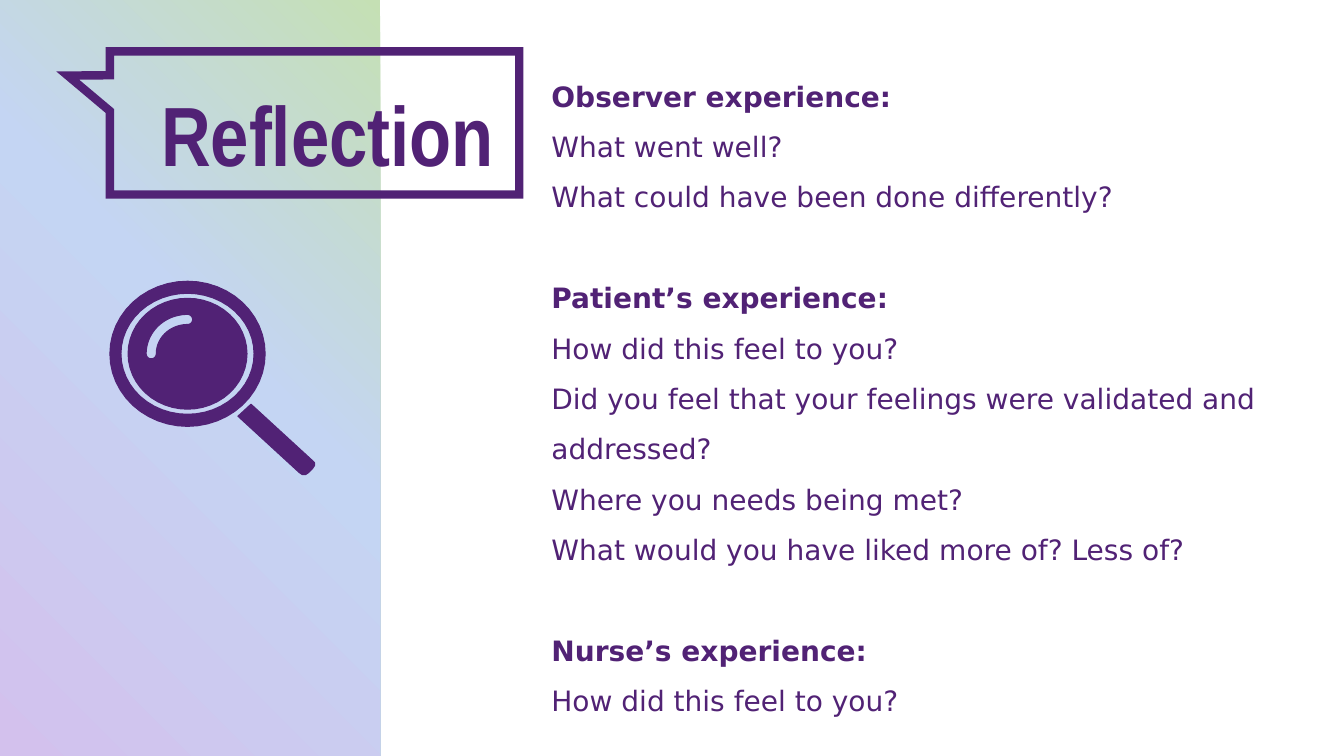
from math import cos, radians, sin

from lxml import etree
from pptx import Presentation
from pptx.dml.color import RGBColor
from pptx.enum.shapes import MSO_SHAPE
from pptx.oxml import parse_xml
from pptx.oxml.ns import nsdecls, qn
from pptx.util import Inches, Pt

RECTANGLE = MSO_SHAPE.RECTANGLE
CALLOUT = MSO_SHAPE.RECTANGULAR_CALLOUT
COLORS = {"purple": "512275", "lilac": "D3C1ED", "sky": "C4D5F3", "leaf": "C5E0B4"}
PURPLE = RGBColor.from_string(COLORS["purple"])


def write_text(frame, text, size, font, bold=False, spacing=1.0, before=0, indent=0):
    paragraph = frame.paragraphs[0]
    if paragraph.runs:
        paragraph = frame.add_paragraph()
    paragraph.line_spacing = spacing
    paragraph.space_before = Pt(before)
    if indent:
        paragraph.level = 2
        properties = paragraph._p.get_or_add_pPr()
        properties.set("marL", str(Inches(indent)))
        properties.set("indent", "0")
    run = paragraph.add_run()
    run.text = text
    run.font.size = Pt(size)
    run.font.name = font
    run.font.bold = bold
    run.font.color.rgb = PURPLE


def arc(x, y, rx, ry, start=0, stop=360):
    steps = 48
    angles = [radians(start + (stop - start) * i / steps) for i in range(steps + 1)]
    return [(x + rx * cos(a), y + ry * sin(a)) for a in angles]


deck = Presentation()
deck.slide_width = Inches(13.33)
deck.slide_height = Inches(7.5)
slide = deck.slides.add_slide(deck.slide_layouts[6])
shapes = slide.shapes

side_panel = shapes.add_shape(RECTANGLE, 0, 0, Inches(3.77), Inches(7.5))
side_panel.shadow.inherit = False
side_panel.line.fill.background()
stops = "".join(
    f'<a:gs pos="{percent * 1000}"><a:srgbClr val="{COLORS[name]}"/></a:gs>'
    for percent, name in [(0, "lilac"), (56, "sky"), (100, "leaf")]
)
gradient = parse_xml(
    f'<a:gradFill {nsdecls("a")} rotWithShape="1"><a:gsLst>{stops}</a:gsLst>'
    '<a:path path="circle"><a:fillToRect t="100000" r="100000"/></a:path></a:gradFill>'
)
side_panel._element.spPr.find(qn("a:prstGeom")).addnext(gradient)

speech_bubble = shapes.add_shape(CALLOUT, Inches(1.09), Inches(0.51), Inches(4.06), Inches(1.42))
speech_bubble.shadow.inherit = False
speech_bubble.adjustments[0] = -0.603
speech_bubble.adjustments[1] = -0.331
speech_bubble.fill.background()
speech_bubble.line.color.rgb = PURPLE
speech_bubble.line.width = Pt(6)
etree.SubElement(speech_bubble.line._ln, qn("a:miter")).set("lim", "800000")

title = shapes.add_textbox(Inches(1.31), Inches(0.57), Inches(3.84), Inches(1.31)).text_frame
title.word_wrap = True
write_text(title, "Reflection", 60, "Arial Narrow", bold=True, spacing=1.2, indent=0.19)

rim = [arc(1.86, 3.51, 0.77, 0.72), arc(1.86, 3.51, 0.66, 0.6)]
glint = (
    arc(1.86, 3.51, 0.41, 0.39, 180, 270)
    + arc(1.86, 3.17, 0.05, 0.05, 270, 450)
    + arc(1.86, 3.51, 0.31, 0.29, 270, 180)
    + arc(1.5, 3.51, 0.05, 0.05, 0, 180)
)
lens = [arc(1.86, 3.51, 0.59, 0.55), glint]
handle = [[
    (2.49, 4.01), (2.36, 4.13), (2.97, 4.69), (3, 4.71), (3.03, 4.71),
    (3.06, 4.69), (3.1, 4.65), (3.12, 4.62), (3.12, 4.59), (3.1, 4.57),
]]
magnifier = shapes.add_group_shape()
for outlines in (rim, lens, handle):
    contours = [[(Inches(x), Inches(y)) for x, y in outline] for outline in outlines]
    builder = magnifier.shapes.build_freeform(*contours[0][0])
    builder.add_line_segments(contours[0][1:])
    for contour in contours[1:]:
        builder.move_to(*contour[0])
        builder.add_line_segments(contour[1:])
    part = builder.convert_to_shape()
    part.shadow.inherit = False
    part.fill.solid()
    part.fill.fore_color.rgb = PURPLE
    part.line.color.rgb = PURPLE
    part.line.width = Pt(0.75)

QUESTIONS = {
    "Observer experience:": [
        "What went well?",
        "What could have been done differently?",
    ],
    "Patient’s experience:": [
        "How did this feel to you?",
        "Did you feel that your feelings were validated and addressed?",
        "Where you needs being met?",
        "What would you have liked more of? Less of?",
    ],
    "Nurse’s experience:": ["How did this feel to you?"],
}
reflection = shapes.add_textbox(Inches(5.37), Inches(0.57), Inches(7.92), Inches(7.17)).text_frame
reflection.word_wrap = True
for number, (heading, questions) in enumerate(QUESTIONS.items()):
    write_text(reflection, heading, 20, "DejaVu Sans", bold=True, spacing=1.5,
               before=36 if number else 0)
    for question in questions:
        write_text(reflection, question, 20, "DejaVu Sans", spacing=1.5)

deck.save("out.pptx")
